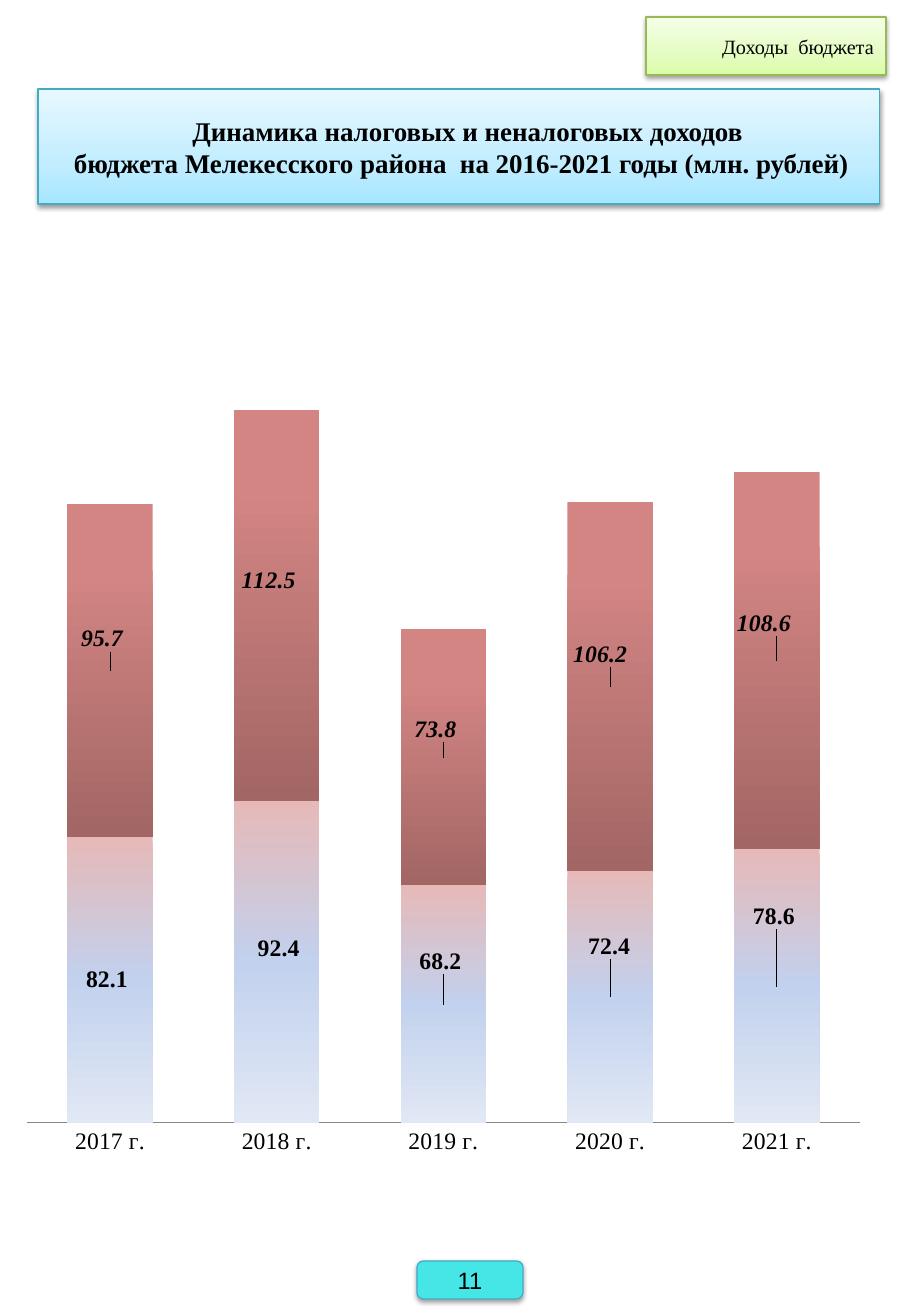
import pptx
import pptx.chart.data
import pptx.dml.color
import pptx.enum.chart
import pptx.enum.shapes
import pptx.enum.text
import pptx.oxml
import pptx.oxml.ns
import pptx.util

SCALE = 7526
CHART_BOX = (26, 227, 861, 1010)
NUMBER_FORMAT = "#,##0.0"
SERIF = "Times New Roman"
COLOURS = {
    "text": "000000", "axis": "868686", "badge": "46E6E6",
    "blue line": "46AAC5", "green line": "98B955",
}
GRADIENTS = {
    "title": [(0, "A7E6FF"), (35, "C1EDFF"), (100, "E7F8FF")],
    "section": [(0, "DAFDA7"), (35, "E4FCC2"), (100, "F5FFE7")],
    "lower": [(0, "E6B9B8"), (50, "C2D1ED"), (100, "E1E8F5")],
    "upper": [(0, "D38583"), (20, "D38583"), (100, "A26664")],
}
YEARS = [f"{year} г." for year in range(2017, 2022)]
SERIES = [
    {"name": "Series 1", "values": [82.1, 92.4, 68.2, 72.4, 78.6],
     "gradient": "lower", "italic": False,
     "shifts": [(-3, -1), (2, -14), (-3, -43), (-1, -51), (-3, -70)]},
    {"name": "Series 2", "values": [95.7, 112.5, 73.8, 106.2, 108.6],
     "gradient": "upper", "italic": True,
     "shifts": [(-8, -32), (-8, -26), (-8, -28), (-10, -32), (-13, -37)]},
]


def px(length):
    """Turn px into EMU."""
    return pptx.util.Emu(length * SCALE)


def colour(name):
    """Look up a named colour."""
    return pptx.dml.color.RGBColor.from_string(COLOURS[name])


def element(markup):
    """Parse one XML element whose root declares the a and c prefixes."""
    tag, rest = markup[1:].split(" ", 1)
    names = pptx.oxml.ns.nsdecls("a", "c")
    return pptx.oxml.parse_xml(f"<{tag} {names} {rest}")


def set_gradient(owner, query, name, angle):
    """Give the gradient fill found under owner its stops and clockwise angle."""
    stops = "".join(
        f'<a:gs pos="{position * 1000}"><a:srgbClr val="{value}"/></a:gs>'
        for position, value in GRADIENTS[name])
    gradient = owner.xpath(query)[0]
    for child in list(gradient):
        gradient.remove(child)
    gradient.append(element(f"<a:gsLst >{stops}</a:gsLst>"))
    gradient.append(element(f'<a:lin ang="{angle * 60000}" scaled="0"/>'))


def set_font(font, size, face=SERIF, bold=False, italic=False):
    """Set size, face, style and the text colour of a font."""
    font.size = pptx.util.Pt(size)
    font.name = face
    font.bold = bold
    font.italic = italic
    font.color.rgb = colour("text")


def add_panel(page, kind, bounds, line, lines, size, gradient=None,
              face=SERIF, bold=False, indent=0):
    """Add a shadowed panel holding (text, alignment) lines."""
    box = page.shapes.add_shape(kind, *map(px, bounds))
    box.line.color.rgb = colour(line)
    box.line.width = pptx.util.Pt(0.75)
    if gradient:
        box.fill.gradient()
        set_gradient(box.element, "./p:spPr/a:gradFill", gradient, 270)
    else:
        box.fill.solid()
        box.fill.fore_color.rgb = colour("badge")
    box.shadow.inherit = False
    box.element.xpath("./p:spPr/a:effectLst")[0].append(element(
        '<a:outerShdw blurRad="39370" dist="20320" dir="5400000" rotWithShape="0">'
        '<a:srgbClr val="000000"><a:alpha val="38000"/></a:srgbClr></a:outerShdw>'))
    frame = box.text_frame
    frame.word_wrap = True
    frame.vertical_anchor = pptx.enum.text.MSO_ANCHOR.MIDDLE
    frame.margin_left = px(12 + indent)
    for index, (text, alignment) in enumerate(lines):
        para = frame.add_paragraph() if index else frame.paragraphs[0]
        para.text = text
        para.alignment = alignment
        set_font(para.font, size, face, bold)


def manual_layout(x, y, extra=""):
    """Build a chart layout from fractions of the chart size."""
    return element(f'<c:layout ><c:manualLayout>{extra}<c:x val="{x:.4f}"/>'
                   f'<c:y val="{y:.4f}"/></c:manualLayout></c:layout>')


def place_plot(chart):
    """Fix the inner plot area inside the chart frame."""
    area = chart.element.xpath(".//c:plotArea")[0]
    for old in area.xpath("./c:layout"):
        area.remove(old)
    layout = manual_layout(
        0, 0.026, '<c:layoutTarget val="inner"/><c:xMode val="edge"/><c:yMode val="edge"/>')
    layout[0].append(element('<c:w val="0.969"/>'))
    layout[0].append(element('<c:h val="0.861"/>'))
    area.insert(0, layout)


def style_series(chart, index, details):
    """Fill one series and place its value labels."""
    series = chart.plots[0].series[index]
    series.format.fill.gradient()
    root = chart.element.xpath(".//c:ser")[index]
    set_gradient(root, "./c:spPr/a:gradFill", details["gradient"], 90)
    labels = series.data_labels
    labels.show_value = True
    labels.number_format = NUMBER_FORMAT
    labels.number_format_is_linked = False
    set_font(labels.font, 14, bold=True, italic=details["italic"])
    for point, (across, down) in enumerate(details["shifts"]):
        label = series.points[point].data_label
        set_font(label.font, 14, bold=True, italic=details["italic"])
        label_root = root.xpath("./c:dLbls/c:dLbl")[point]
        label_root.insert(1, manual_layout(across / CHART_BOX[2], down / CHART_BOX[3]))


def add_income_chart(page):
    """Add the stacked column chart of yearly income."""
    data = pptx.chart.data.CategoryChartData(number_format=NUMBER_FORMAT)
    data.categories = YEARS
    for details in SERIES:
        data.add_series(details["name"], details["values"])
    chart = page.shapes.add_chart(
        pptx.enum.chart.XL_CHART_TYPE.COLUMN_STACKED, *map(px, CHART_BOX), data).chart
    chart.has_title = False
    chart.has_legend = False
    set_font(chart.font, 18)
    plot = chart.plots[0]
    plot.gap_width = 95
    plot.overlap = 100
    plot.vary_by_categories = False
    values = chart.value_axis
    values.minimum_scale = 0
    values.maximum_scale = 250
    values.has_major_gridlines = False
    values.visible = False
    years = chart.category_axis
    years.major_tick_mark = pptx.enum.chart.XL_TICK_MARK.NONE
    years.format.line.color.rgb = colour("axis")
    years.format.line.width = pptx.util.Pt(0.75)
    set_font(years.tick_labels.font, 14)
    place_plot(chart)
    for index, details in enumerate(SERIES):
        style_series(chart, index, details)


def main():
    """Build the budget income slide."""
    deck = pptx.Presentation()
    deck.slide_width, deck.slide_height = px(911), px(1316)
    page = deck.slides.add_slide(deck.slide_layouts[6])
    kinds = pptx.enum.shapes.MSO_SHAPE
    align = pptx.enum.text.PP_ALIGN
    add_panel(page, kinds.RECTANGLE, (38, 89, 842, 115), "blue line",
              [("Динамика налоговых и неналоговых доходов ", align.CENTER),
               ("бюджета Мелекесского района  на 2016-2021 годы (млн. рублей)", align.LEFT)],
              16, gradient="title", bold=True, indent=24)
    add_income_chart(page)
    add_panel(page, kinds.RECTANGLE, (646, 17, 240, 58), "green line",
              [("Доходы  бюджета", align.RIGHT)], 12, gradient="section", indent=15)
    add_panel(page, kinds.FLOWCHART_ALTERNATE_PROCESS, (417, 1261, 106, 38), "blue line",
              [("11", align.CENTER)], 14, face="Arial")
    deck.save("out.pptx")


if __name__ == "__main__":
    main()
